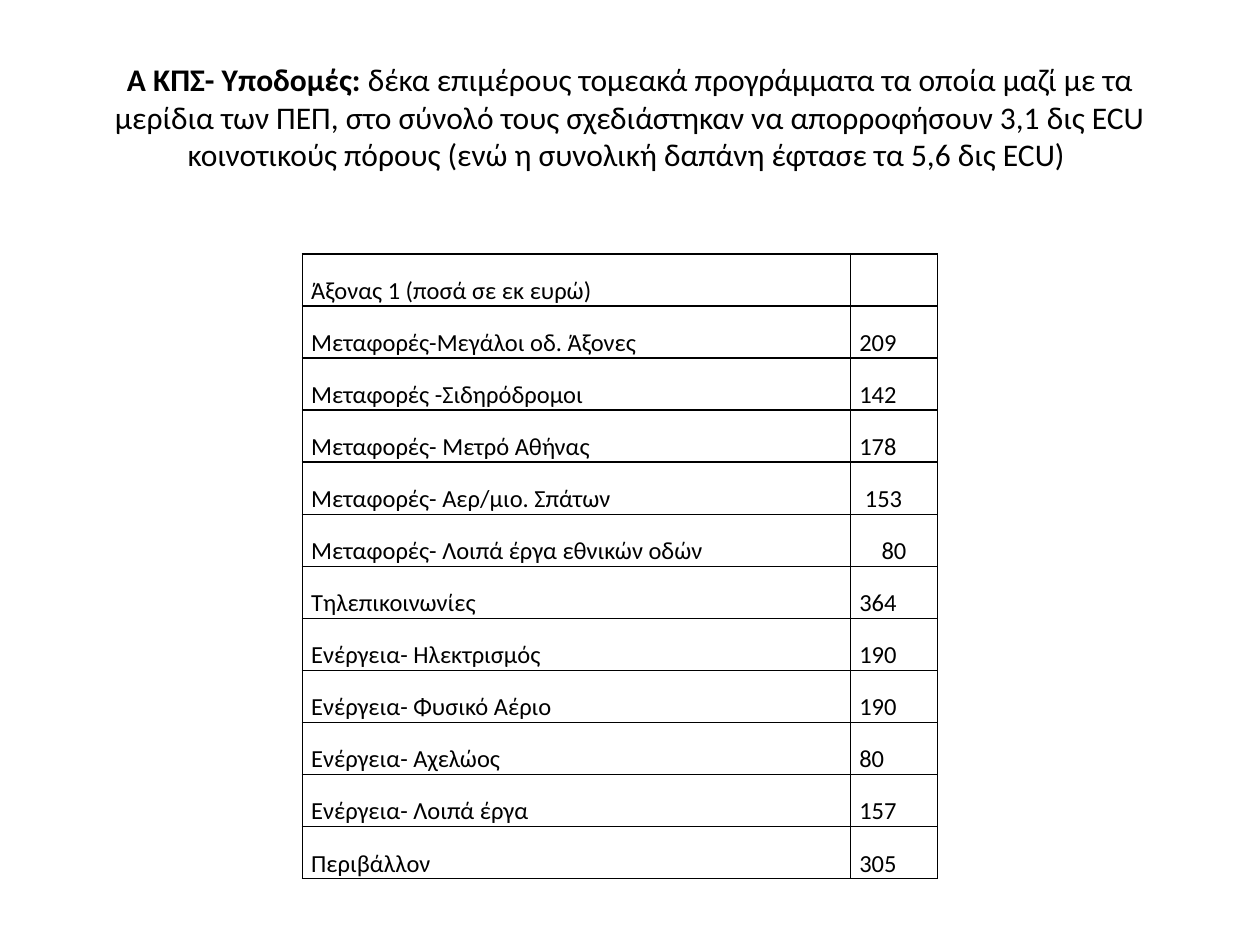
from dataclasses import dataclass

from lxml import etree
from pptx import Presentation
from pptx import util as u
from pptx.dml.color import RGBColor
from pptx.enum import text
from pptx.oxml import ns

BLACK = RGBColor(0, 0, 0)
WHITE = RGBColor(255, 255, 255)
FONT = "Calibri"
ROW_HEIGHT = 29.75
COLUMN_WIDTHS = (313.2, 49.7)
BORDER = u.Pt(1)


@dataclass
class Project:
    label: str
    amount: str
    amount_align: text.PP_ALIGN = text.PP_ALIGN.JUSTIFY


PROJECTS = [
    Project("Άξονας 1 (ποσά σε εκ ευρώ)", ""),
    Project("Μεταφορές-Μεγάλοι οδ. Άξονες", "209"),
    Project("Μεταφορές -Σιδηρόδρομοι", "142"),
    Project("Μεταφορές- Μετρό Αθήνας", "178"),
    Project("Μεταφορές- Αερ/μιο. Σπάτων", " 153"),
    Project("Μεταφορές- Λοιπά έργα εθνικών οδών", "80", text.PP_ALIGN.CENTER),
    Project("Τηλεπικοινωνίες", "364"),
    Project("Ενέργεια- Ηλεκτρισμός", "190"),
    Project("Ενέργεια- Φυσικό Αέριο", "190"),
    Project("Ενέργεια- Αχελώος", "80"),
    Project("Ενέργεια- Λοιπά έργα", "157"),
    Project("Περιβάλλον", "305"),
]


def set_font(paragraph, size: float) -> None:
    paragraph.font.name = FONT
    paragraph.font.size = u.Pt(size)
    paragraph.font.color.rgb = BLACK


def add_borders(cell) -> None:
    properties = cell._tc.get_or_add_tcPr()
    for side in ("lnL", "lnR", "lnT", "lnB"):
        line = etree.SubElement(properties, ns.qn(f"a:{side}"), w=str(BORDER))
        fill = etree.SubElement(line, ns.qn("a:solidFill"))
        etree.SubElement(fill, ns.qn("a:srgbClr"), val=str(BLACK))


def fill_cell(cell, content: str, align: text.PP_ALIGN) -> None:
    add_borders(cell)
    cell.fill.solid()
    cell.fill.fore_color.rgb = WHITE
    cell.vertical_anchor = text.MSO_ANCHOR.BOTTOM
    cell.margin_left = cell.margin_right = u.Pt(5.04)
    cell.margin_top = cell.margin_bottom = u.Pt(0)
    cell.text = content
    paragraph = cell.text_frame.paragraphs[0]
    paragraph.alignment = align
    paragraph.line_spacing = 1.15
    set_font(paragraph, 14)


def add_heading(slide, lead: str, body: str) -> None:
    heading = slide.shapes.add_textbox(u.Pt(36), u.Pt(21.6), u.Pt(648), u.Pt(90))
    frame = heading.text_frame
    frame.word_wrap = True
    frame.vertical_anchor = text.MSO_ANCHOR.MIDDLE
    paragraph = frame.paragraphs[0]
    paragraph.alignment = text.PP_ALIGN.CENTER
    set_font(paragraph, 18)
    for words, bold in ((lead, True), (body, False)):
        run = paragraph.add_run()
        run.text = words
        run.font.bold = bold


def add_budget(slide, projects: list[Project]) -> None:
    budget = slide.shapes.add_table(
        len(projects), len(COLUMN_WIDTHS), u.Pt(172.8), u.Pt(145.2),
        u.Pt(sum(COLUMN_WIDTHS)), u.Pt(ROW_HEIGHT * len(projects))).table
    budget.first_row = budget.horz_banding = False
    for column, width in zip(budget.columns, COLUMN_WIDTHS):
        column.width = u.Pt(width)
    for row, project in zip(budget.rows, projects):
        row.height = u.Pt(ROW_HEIGHT)
        fill_cell(row.cells[0], project.label, text.PP_ALIGN.JUSTIFY)
        fill_cell(row.cells[1], project.amount, project.amount_align)


def main() -> None:
    deck = Presentation()
    deck.slide_width, deck.slide_height = u.Pt(720), u.Pt(540)
    slide = deck.slides.add_slide(deck.slide_layouts[6])
    add_heading(
        slide, "Α ΚΠΣ- Υποδομές: ",
        "δέκα επιμέρους τομεακά προγράμματα τα οποία μαζί με τα μερίδια των ΠΕΠ, "
        "στο σύνολό τους σχεδιάστηκαν να απορροφήσουν 3,1 δις ECU κοινοτικούς "
        "πόρους (ενώ η συνολική δαπάνη έφτασε τα 5,6 δις ECU) ")
    add_budget(slide, PROJECTS)
    deck.save("out.pptx")


if __name__ == "__main__":
    main()
